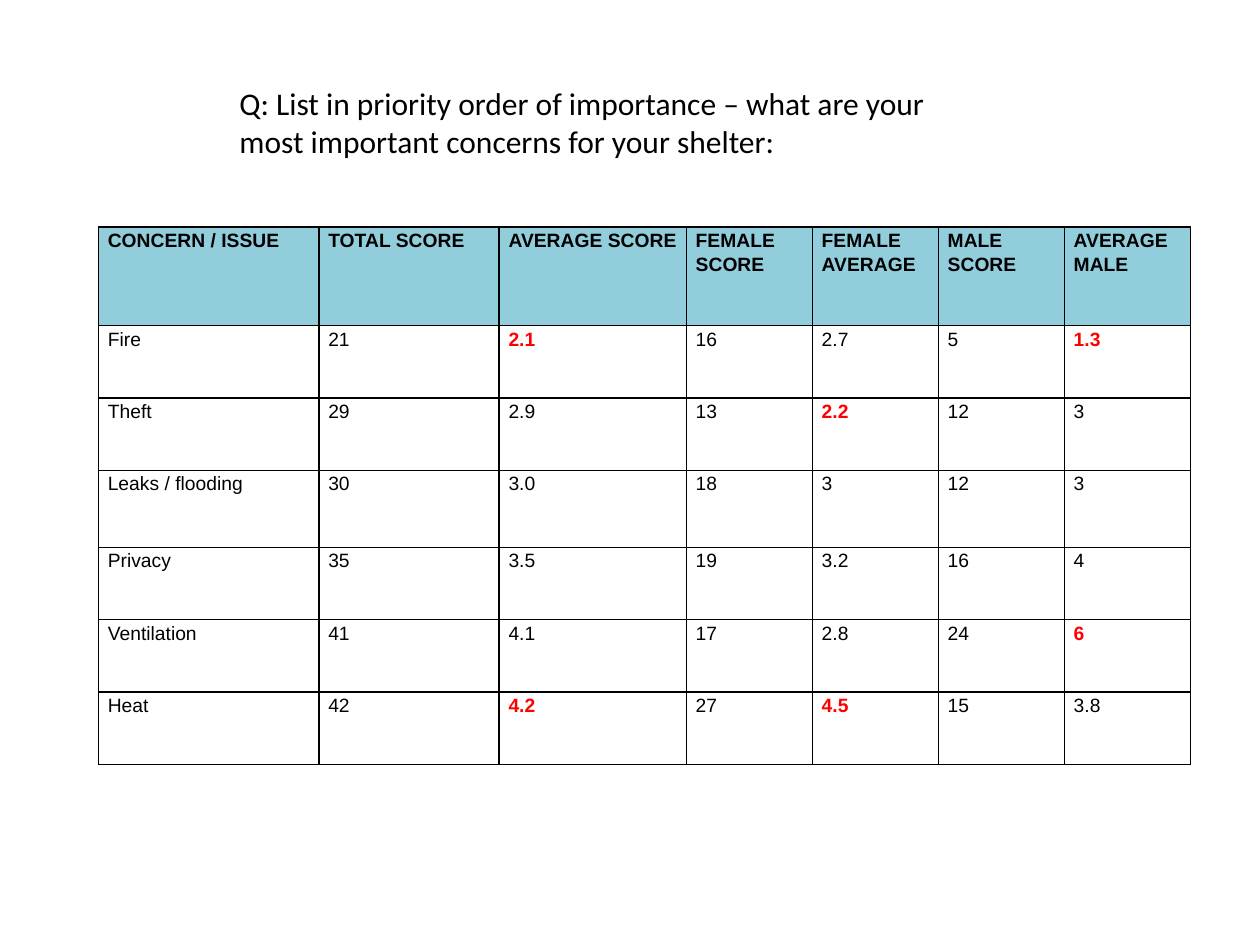
"""Build a slide that ranks shelter concerns by total, female and male score."""
from lxml.etree import SubElement
from pptx import Presentation
from pptx.dml.color import RGBColor
from pptx.enum.text import MSO_ANCHOR, MSO_AUTO_SIZE, PP_ALIGN
from pptx.oxml.ns import qn
from pptx.util import Pt

COLORS = {"ink": "000000", "alert": "FF0000", "head": "92CDDC"}
ROWS = [
    ["CONCERN / ISSUE", "TOTAL SCORE", "AVERAGE SCORE", "FEMALE SCORE",
     "FEMALE AVERAGE", "MALE SCORE", "AVERAGE MALE"],
    ["Fire", "21", "2.1", "16", "2.7", "5", "1.3"],
    ["Theft", "29", "2.9", "13", "2.2", "12", "3"],
    ["Leaks / flooding", "30", "3.0", "18", "3", "12", "3"],
    ["Privacy", "35", "3.5", "19", "3.2", "16", "4"],
    ["Ventilation", "41", "4.1", "17", "2.8", "24", "6"],
    ["Heat", "42", "4.2", "27", "4.5", "15", "3.8"],
]
ALERTS = {(1, 2), (1, 6), (2, 4), (5, 6), (6, 2), (6, 4)}
WIDTHS = [126, 103, 107] + [72] * 4
HEIGHTS = [56.4, 41.4, 41.4, 44, 41.4, 41.4, 41.4]
CELL = {"margin_left": Pt(5.4), "margin_right": Pt(5.4), "margin_top": 0,
        "margin_bottom": 0, "vertical_anchor": MSO_ANCHOR.TOP}
PARA = {"line_spacing": 1.15, "space_after": Pt(13.2)}
TITLE = {"left": Pt(129.6), "top": Pt(44.6), "width": Pt(416), "height": Pt(51)}
FRAME = {"word_wrap": True, "auto_size": MSO_AUTO_SIZE.SHAPE_TO_FIT_TEXT,
         "vertical_anchor": MSO_ANCHOR.TOP}


def apply(item, values):
    for name, value in values.items():
        setattr(item, name, value)


def style(font, face, size, color, bold=False):
    apply(font, {"name": face, "size": Pt(size), "bold": bold})
    font.color.rgb = RGBColor.from_string(COLORS[color])


deck = Presentation()
apply(deck, {"slide_width": Pt(720), "slide_height": Pt(540)})
slide = deck.slides.add_slide(deck.slide_layouts[5])

title = slide.shapes.title
apply(title, TITLE)
apply(title.text_frame, FRAME)
para = title.text_frame.paragraphs[0]
para.alignment = PP_ALIGN.LEFT
run = para.add_run()
run.text = ("Q: List in priority order of importance – what are your "
            "most important concerns for your shelter:")
style(run.font, "Calibri", 18, "ink")

table = slide.shapes.add_table(
    len(ROWS), len(WIDTHS), Pt(56.2), Pt(129.6),
    Pt(sum(WIDTHS)), Pt(sum(HEIGHTS))).table
apply(table, {"first_row": True, "horz_banding": False})
for col, width in zip(table.columns, WIDTHS):
    col.width = Pt(width)

for r, (row, height) in enumerate(zip(ROWS, HEIGHTS)):
    table.rows[r].height = Pt(height)
    for c, text in enumerate(row):
        cell = table.cell(r, c)
        apply(cell, CELL)
        para = cell.text_frame.paragraphs[0]
        apply(para, PARA)
        para.alignment = PP_ALIGN.JUSTIFY if c else PP_ALIGN.LEFT
        run = para.add_run()
        run.text = text
        alert = (r, c) in ALERTS
        style(run.font, "Arial", 11, "alert" if alert else "ink", alert or r == 0)
        props = cell._tc.get_or_add_tcPr()
        for side in ("a:lnL", "a:lnR", "a:lnT", "a:lnB"):
            line = SubElement(props, qn(side), w=str(Pt(1)))
            fill = SubElement(line, qn("a:solidFill"))
            SubElement(fill, qn("a:srgbClr"), val=COLORS["ink"])
        if r == 0:
            cell.fill.solid()
            cell.fill.fore_color.rgb = RGBColor.from_string(COLORS["head"])
        else:
            cell.fill.background()

deck.save("out.pptx")
